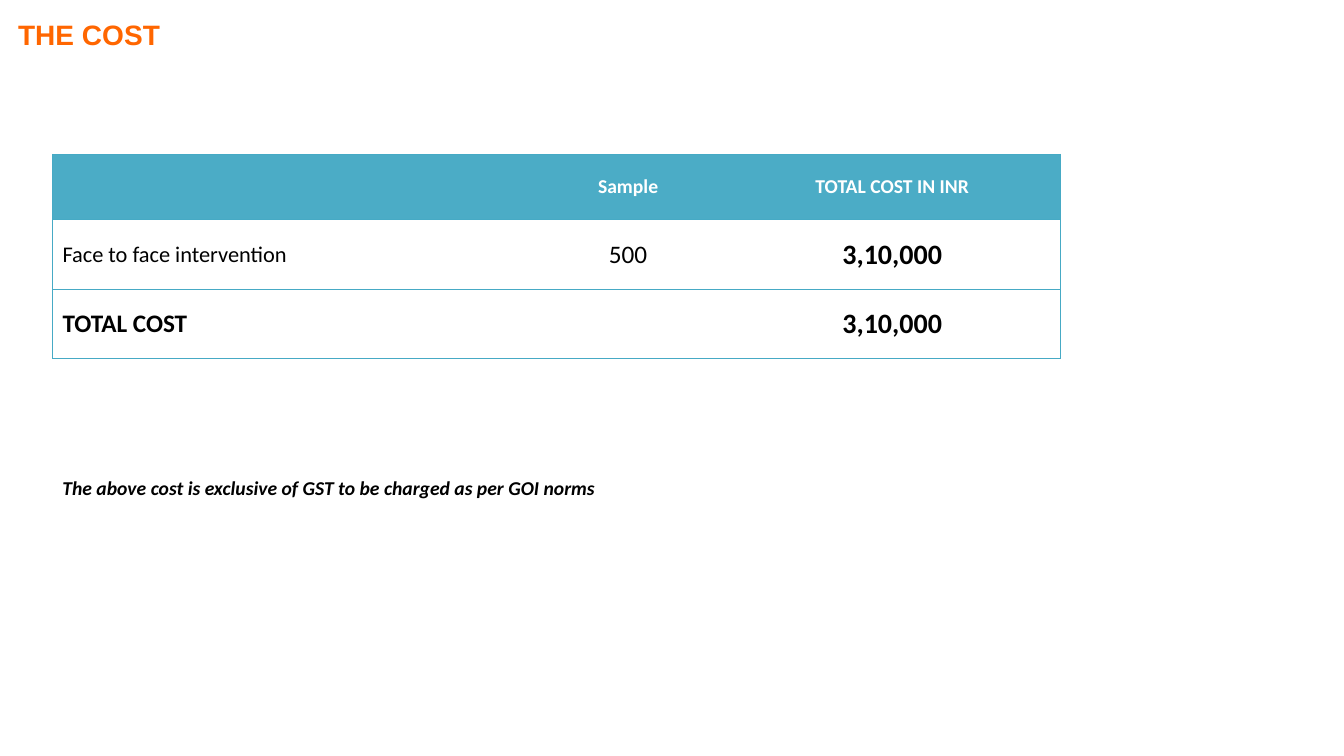
from pptx import Presentation
from pptx.dml.color import RGBColor
from pptx.enum.text import MSO_ANCHOR as Anchor, MSO_AUTO_SIZE as AutoSize, PP_ALIGN as Align
from pptx.oxml.ns import qn
from pptx.util import Inches, Pt
from lxml.etree import SubElement

COLORS = {
    "title": "FF6600",
    "header": "4BACC6",
    "border": "46AAC5",
    "white": "FFFFFF",
    "black": "000000",
}
COLUMN_WIDTHS = [4.76, 1.9, 3.34]
ROW_HEIGHTS = [0.65, 0.69, 0.69]
HEADER = {"size": 14, "bold": True, "color": "white"}
AMOUNT = {"size": 20, "bold": True}
COST_ROWS = [
    [("", {}), ("Sample", HEADER), ("TOTAL COST IN INR", HEADER)],
    [("Face to face intervention", {"size": 16}), ("500", {"size": 18}), ("3,10,000", AMOUNT)],
    [("TOTAL COST", {"size": 18, "bold": True}), ("", {}), ("3,10,000", AMOUNT)],
]


def write_text(frame, text, size=14, font="Calibri", color="black",
               bold=False, italic=False, align=Align.LEFT):
    paragraph = frame.paragraphs[0]
    paragraph.alignment = align
    run = paragraph.add_run()
    run.text = text
    run.font.name = font
    run.font.size = Pt(size)
    run.font.bold = bold
    run.font.italic = italic
    run.font.color.rgb = RGBColor.from_string(COLORS[color])


def set_border(cell, side, visible):
    """Draw one cell side ("L", "R", "T" or "B"), or clear it."""
    properties = cell._tc.get_or_add_tcPr()
    line = SubElement(properties, qn(f"a:ln{side}"), w=str(Pt(0.75)))
    if visible:
        fill = SubElement(line, qn("a:solidFill"))
        SubElement(fill, qn("a:srgbClr"), val=COLORS["border"])
    else:
        SubElement(line, qn("a:noFill"))


class CostSlide:
    def __init__(self, presentation):
        self.slide = presentation.slides.add_slide(presentation.slide_layouts[5])

    def add_title(self, text, left, top, width, height):
        title = self.slide.shapes.title
        title.left, title.top = Inches(left), Inches(top)
        title.width, title.height = Inches(width), Inches(height)
        frame = title.text_frame
        frame.margin_left = frame.margin_right = frame.margin_bottom = 0
        frame.margin_top = Inches(0.01)
        frame.vertical_anchor = Anchor.TOP
        frame.auto_size = AutoSize.SHAPE_TO_FIT_TEXT
        write_text(frame, text, size=20, font="Arial", color="title", bold=True)

    def add_table(self, rows, left, top):
        table = self.slide.shapes.add_table(
            len(rows), len(COLUMN_WIDTHS), Inches(left), Inches(top),
            Inches(sum(COLUMN_WIDTHS)), Inches(sum(ROW_HEIGHTS))).table
        table.first_row = table.horz_banding = False
        for column, width in zip(table.columns, COLUMN_WIDTHS):
            column.width = Inches(width)
        for row, height in zip(table.rows, ROW_HEIGHTS):
            row.height = Inches(height)
        last_column = len(COLUMN_WIDTHS) - 1
        for row_index, row in enumerate(rows):
            for column_index, (text, style) in enumerate(row):
                cell = table.cell(row_index, column_index)
                cell.vertical_anchor = Anchor.MIDDLE
                set_border(cell, "L", column_index == 0)
                set_border(cell, "R", column_index == last_column)
                set_border(cell, "T", True)
                set_border(cell, "B", True)
                if row_index == 0:
                    cell.fill.solid()
                    cell.fill.fore_color.rgb = RGBColor.from_string(COLORS["header"])
                else:
                    cell.fill.background()
                if text:
                    align = Align.CENTER if column_index else Align.LEFT
                    write_text(cell.text_frame, text, align=align, **style)

    def add_note(self, text, left, top, width, height):
        box = self.slide.shapes.add_textbox(
            Inches(left), Inches(top), Inches(width), Inches(height))
        box.text_frame.word_wrap = True
        box.text_frame.auto_size = AutoSize.SHAPE_TO_FIT_TEXT
        write_text(box.text_frame, text, bold=True, italic=True)


def main():
    presentation = Presentation()
    presentation.slide_width, presentation.slide_height = Inches(13.33), Inches(7.5)
    cost = CostSlide(presentation)
    cost.add_title("THE COST", 0.18, 0.16, 3.57, 0.35)
    cost.add_table(COST_ROWS, 0.52, 1.53)
    cost.add_note("The above cost is exclusive of GST to be charged as per GOI norms",
                  0.52, 4.67, 11.78, 0.34)
    presentation.save("out.pptx")


if __name__ == "__main__":
    main()
